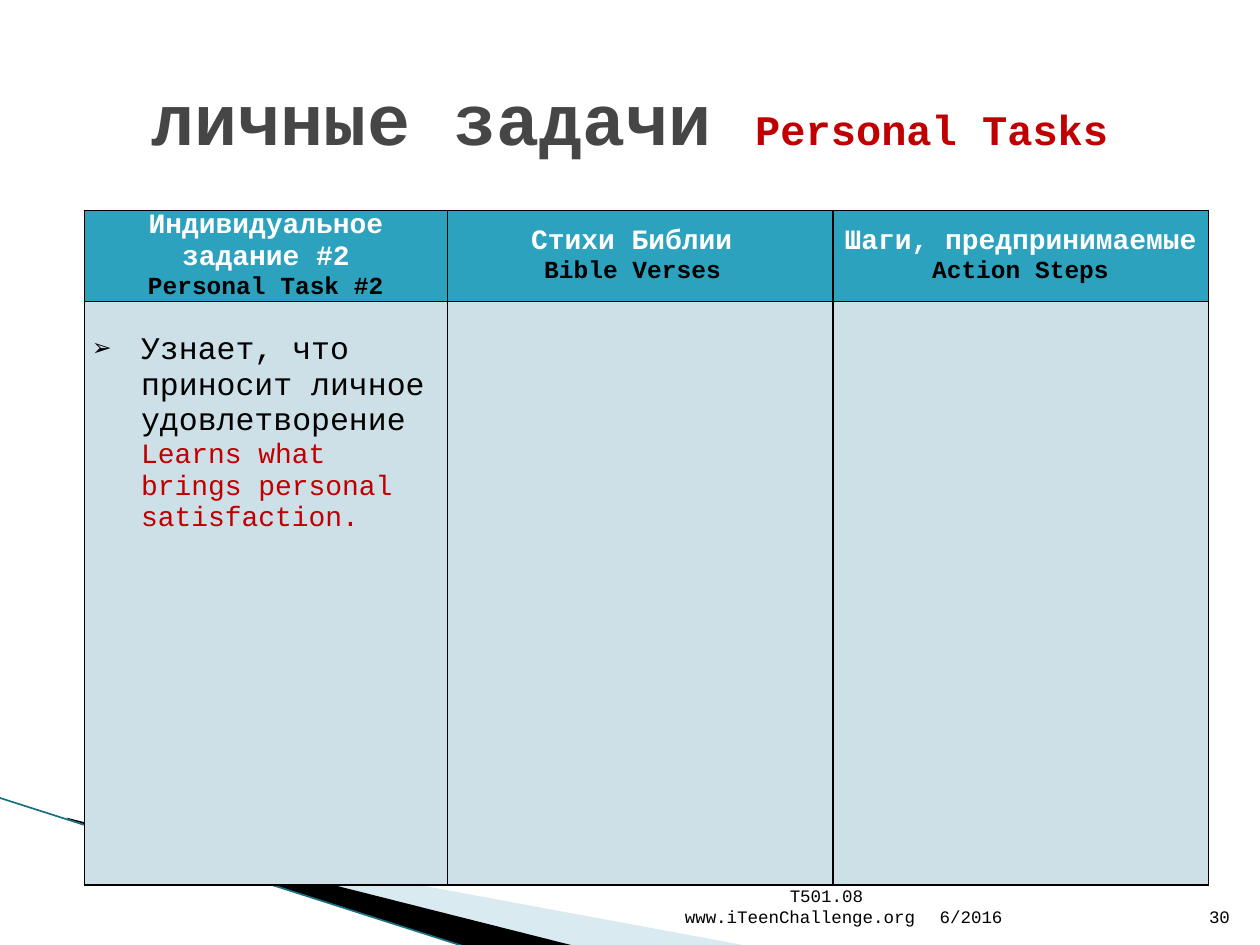
from lxml import etree
from pptx import Presentation
from pptx.dml.color import RGBColor
from pptx.enum.text import MSO_ANCHOR, PP_ALIGN
from pptx.oxml import parse_xml
from pptx.oxml.ns import nsdecls, qn
from pptx.util import Inches, Pt

LEFT, CENTER, RIGHT = PP_ALIGN.LEFT, PP_ALIGN.CENTER, PP_ALIGN.RIGHT
TOP, MIDDLE, BOTTOM = MSO_ANCHOR.TOP, MSO_ANCHOR.MIDDLE, MSO_ANCHOR.BOTTOM
FONT = "Courier New"
COLORS = {
    "black": "000000", "white": "FFFFFF", "gray": "464646", "red": "C00000",
    "header": "2DA2BF", "body": "CDE0E8", "swoosh": "A0CBDC", "edge": "1A6F83",
}


def add_span(para, text, color, **formats):
    span = para.add_run()
    span.text = text
    span.font.color.rgb = RGBColor.from_string(COLORS[color])
    for name, value in {"name": FONT, "bold": False, **formats}.items():
        setattr(span.font, name, value)


def add_box(left, top, width, height, anchor):
    box = slide.shapes.add_textbox(Inches(left), Inches(top), Inches(width), Inches(height))
    box.text_frame.word_wrap = True
    box.text_frame.vertical_anchor = anchor
    return box.text_frame


deck = Presentation()
deck.slide_width, deck.slide_height = Inches(10), Inches(7.5)
slide = deck.slides.add_slide(deck.slide_layouts[6])

# Corner decoration
swooshes = [
    ("swoosh", [(0.55, 6.51), (5.95, 7.51), (4.56, 7.51), (0.55, 6.5)]),
    ("black", [(0.53, 6.49), (4.57, 7.51), (3.72, 7.52), (0.54, 6.5)]),
]
for color, corners in swooshes:
    points = [(Inches(x), Inches(y)) for x, y in corners]
    builder = slide.shapes.build_freeform(*points[0])
    builder.add_line_segments(points[1:], close=True)
    swoosh = builder.convert_to_shape()
    swoosh.shadow.inherit = False
    swoosh.fill.solid()
    swoosh.fill.fore_color.rgb = RGBColor.from_string(COLORS[color])
    swoosh.line.fill.background()
    if color == "swoosh":
        tint = swoosh.fill._xPr.find(".//" + qn("a:srgbClr"))
        etree.SubElement(tint, qn("a:alpha"), val="40000")

edge = slide.shapes.add_connector(1, Inches(-0.01), Inches(6.33), Inches(3.71), Inches(7.52))
edge.line.color.rgb = RGBColor.from_string(COLORS["edge"])
edge.line.width = Pt(0.95)
etree.SubElement(edge._element.spPr, qn("a:effectLst"))

# Task table
widths, heights = [2.88, 3.06, 2.98], [0.72, 4.63]
frame = slide.shapes.add_table(
    2, 3, Inches(0.67), Inches(1.67), Inches(sum(widths)), Inches(sum(heights)))
table = frame.table
for column, width in zip(table.columns, widths):
    column.width = Inches(width)
for row, height in zip(table.rows, heights):
    row.height = Inches(height)

for row, fill in zip(table.rows, ("header", "body")):
    for cell in row.cells:
        cell.margin_left = cell.margin_right = Inches(0.07)
        cell.margin_top = cell.margin_bottom = 0
        for side in ("lnL", "lnR", "lnT", "lnB"):
            cell._tc.get_or_add_tcPr().append(parse_xml(
                f'<a:{side} {nsdecls("a")} w="{Pt(1)}"><a:solidFill>'
                f'<a:srgbClr val="{COLORS["black"]}"/></a:solidFill></a:{side}>'))
        cell.fill.solid()
        cell.fill.fore_color.rgb = RGBColor.from_string(COLORS[fill])

headings = [
    ("Индивидуальное задание #2", "Personal Task #2", TOP),
    ("Стихи Библии ", "Bible Verses ", MIDDLE),
    ("Шаги, предпринимаемые", "Action Steps", MIDDLE),
]
for cell, (russian, english, anchor) in zip(table.rows[0].cells, headings):
    cell.vertical_anchor = anchor
    para = cell.text_frame.paragraphs[0]
    para.alignment = CENTER
    add_span(para, russian, "white", size=Pt(16), bold=True)
    para = cell.text_frame.add_paragraph()
    para.alignment = CENTER
    add_span(para, english, "black", size=Pt(14), bold=True)

task = table.cell(1, 0)
task.margin_top = Inches(0.25)
para = task.text_frame.paragraphs[0]
props = para._p.get_or_add_pPr()
props.set("marL", str(Inches(0.38)))
props.set("indent", str(Inches(-0.38)))
etree.SubElement(props, qn("a:buFont"), typeface=FONT)
etree.SubElement(props, qn("a:buChar"), char="➢")
add_span(para, "Узнает, что приносит личное удовлетворение", "black", size=Pt(18))
para.add_line_break()
add_span(para, "Learns what brings personal satisfaction.", "red", size=Pt(16))

# Footer: date, course and page number
for left, width, text, align in [(7.36, 2.1, "6/2016", LEFT), (9.46, 0.4, "30", RIGHT)]:
    para = add_box(left, 7.01, width, 0.4, BOTTOM).paragraphs[0]
    para.alignment = align
    add_span(para, text, "black", size=Pt(10))

course = add_box(4.79, 7.01, 2.57, 0.4, BOTTOM)
para = course.paragraphs[0]
para.alignment = LEFT
para._p.get_or_add_pPr().set("marL", str(Inches(1.38)))
add_span(para, "T501.08", "black", size=Pt(10))
para = course.add_paragraph()
para.alignment = RIGHT
add_span(para, "www.iTeenChallenge.org", "black", size=Pt(10))

# Title
para = add_box(0.5, 0.3, 9, 1.25, MIDDLE).paragraphs[0]
para.alignment = CENTER
add_span(para, "личные задачи ", "gray", size=Pt(41), bold=True)
add_span(para, "Personal Tasks", "red", size=Pt(24), bold=True)

deck.save("out.pptx")
